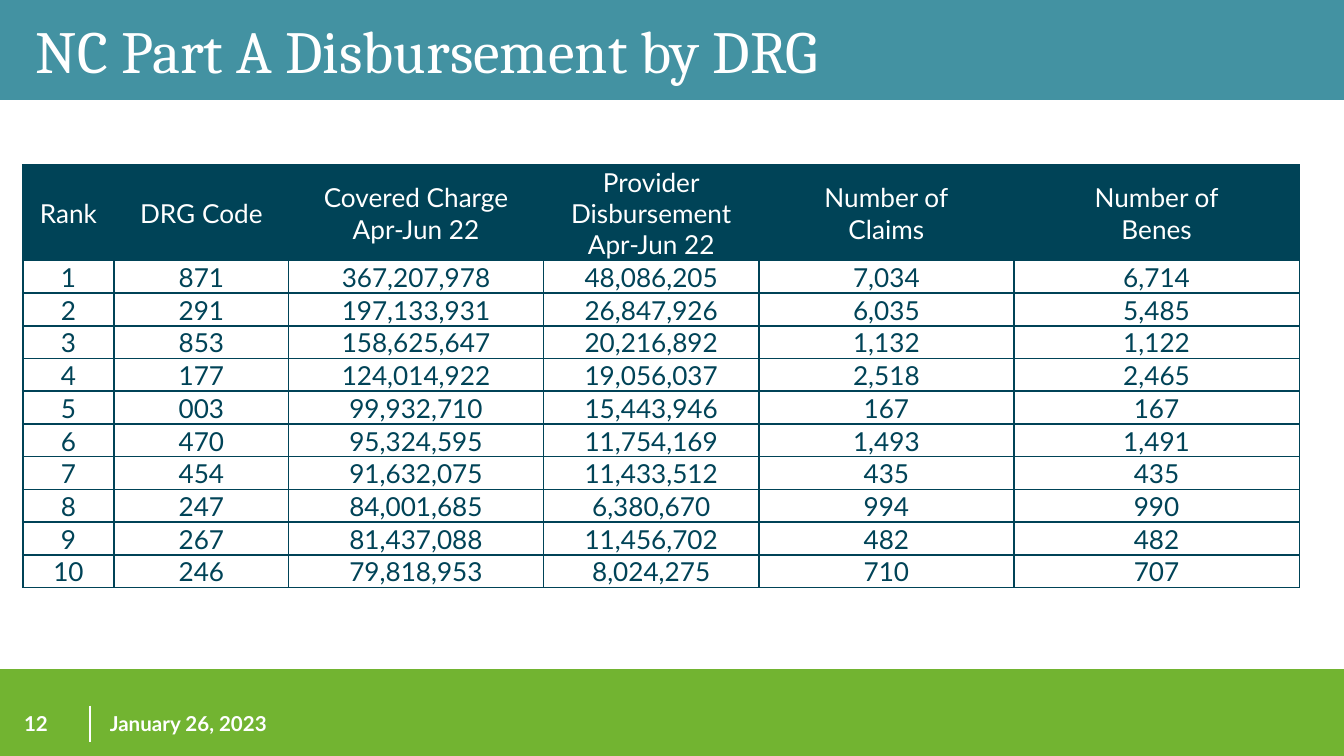
from copy import deepcopy

from lxml import etree
from pptx import Presentation
from pptx.dml.color import RGBColor
from pptx.enum import shapes, text
from pptx.oxml import ns
from pptx.util import Pt

WHITE = RGBColor(0xFF, 0xFF, 0xFF)
TEAL = RGBColor(0x43, 0x92, 0xA2)
GREEN = RGBColor(0x72, 0xB4, 0x31)
NAVY = RGBColor(0x00, 0x43, 0x57)

COLUMN_WIDTHS = (49, 93.5, 136.5, 115.5, 136.5, 153)
HEADER_HEIGHT = 51.1
ROW_HEIGHT = 17.3
HEADERS = (
    "Rank", "DRG Code", "Covered Charge\nApr-Jun 22",
    "Provider\nDisbursement\nApr-Jun 22", "Number of\nClaims", "Number of\nBenes",
)
DRG_ROWS = (
    ("871", "367,207,978", "48,086,205", "7,034", "6,714"),
    ("291", "197,133,931", "26,847,926", "6,035", "5,485"),
    ("853", "158,625,647", "20,216,892", "1,132", "1,122"),
    ("177", "124,014,922", "19,056,037", "2,518", "2,465"),
    ("003", "99,932,710", "15,443,946", "167", "167"),
    ("470", "95,324,595", "11,754,169", "1,493", "1,491"),
    ("454", "91,632,075", "11,433,512", "435", "435"),
    ("247", "84,001,685", "6,380,670", "994", "990"),
    ("267", "81,437,088", "11,456,702", "482", "482"),
    ("246", "79,818,953", "8,024,275", "710", "707"),
)


def write_text(tf, content, size=14, font="Lato", color=WHITE, bold=False,
               align=text.PP_ALIGN.LEFT):
    p = tf.paragraphs[0]
    p.text = content
    p.alignment = align
    for r in p.runs:
        r.font.size = Pt(size)
        r.font.name = font
        r.font.bold = bold
        r.font.color.rgb = color
    for br in p._p.findall(ns.qn("a:br")):
        br.append(deepcopy(p.runs[0].font._element))


def add_band(s, top, height, color):
    sp = s.shapes.add_shape(shapes.MSO_SHAPE.RECTANGLE, 0, Pt(top), Pt(720), Pt(height))
    sp.shadow.inherit = False
    sp.fill.solid()
    sp.fill.fore_color.rgb = color
    sp.line.fill.background()
    return sp


def add_divider(s, x, top, bottom):
    line = s.shapes.add_connector(
        shapes.MSO_CONNECTOR.STRAIGHT, Pt(x), Pt(top), Pt(x), Pt(bottom))
    line.line.color.rgb = WHITE
    line.line.width = Pt(1)
    etree.SubElement(line._element.spPr, ns.qn("a:effectLst"))


def add_label(s, left, top, width, height, content, **style):
    tf = s.shapes.add_textbox(Pt(left), Pt(top), Pt(width), Pt(height)).text_frame
    tf.word_wrap = True
    tf.vertical_anchor = text.MSO_ANCHOR.MIDDLE
    write_text(tf, content, **style)


def add_borders(cell):
    tc_pr = cell._tc.get_or_add_tcPr()
    for side in ("lnL", "lnR", "lnT", "lnB"):
        ln = etree.SubElement(tc_pr, ns.qn(f"a:{side}"), w=str(Pt(1)))
        fill = etree.SubElement(ln, ns.qn("a:solidFill"))
        etree.SubElement(fill, ns.qn("a:srgbClr"), val=str(NAVY))


def format_cell(cell, content, header):
    cell.margin_left = cell.margin_right = cell.margin_top = Pt(0.7)
    cell.margin_bottom = 0
    cell.vertical_anchor = text.MSO_ANCHOR.MIDDLE
    add_borders(cell)
    if header:
        cell.fill.solid()
        cell.fill.fore_color.rgb = NAVY
    else:
        cell.fill.background()
    write_text(cell.text_frame, content, color=WHITE if header else NAVY,
               align=text.PP_ALIGN.CENTER)


def add_drg_table(s, left, top):
    rows = [HEADERS] + [(str(rank), *row) for rank, row in enumerate(DRG_ROWS, 1)]
    heights = [HEADER_HEIGHT] + [ROW_HEIGHT] * len(DRG_ROWS)
    table = s.shapes.add_table(
        len(rows), len(HEADERS), Pt(left), Pt(top),
        Pt(sum(COLUMN_WIDTHS)), Pt(sum(heights))).table
    table.horz_banding = False
    for column, width in zip(table.columns, COLUMN_WIDTHS):
        column.width = Pt(width)
    for i, (row, height) in enumerate(zip(rows, heights)):
        table.rows[i].height = Pt(height)
        for j, content in enumerate(row):
            format_cell(table.cell(i, j), content, header=i == 0)


def main():
    prs = Presentation()
    prs.slide_width = Pt(720)
    prs.slide_height = Pt(405)
    s = prs.slides.add_slide(prs.slide_layouts[6])

    add_band(s, 358.5, 46.5, GREEN)
    title_band = add_band(s, 0, 52.5, TEAL)
    title_band.line.color.rgb = TEAL
    title_band.line.width = Pt(2)
    add_divider(s, 48.2, 378, 397.5)
    add_label(s, 5.8, 378, 44, 19.5, "12", size=11, bold=True)
    add_label(s, 51.8, 378, 144, 19.5, "January 26, 2023", size=11, bold=True)
    add_label(s, 12.2, -10.8, 696, 75, "NC Part A Disbursement by DRG",
              size=32, font="Cambria")
    add_drg_table(s, 12.2, 88.4)

    prs.save("out.pptx")


if __name__ == "__main__":
    main()
